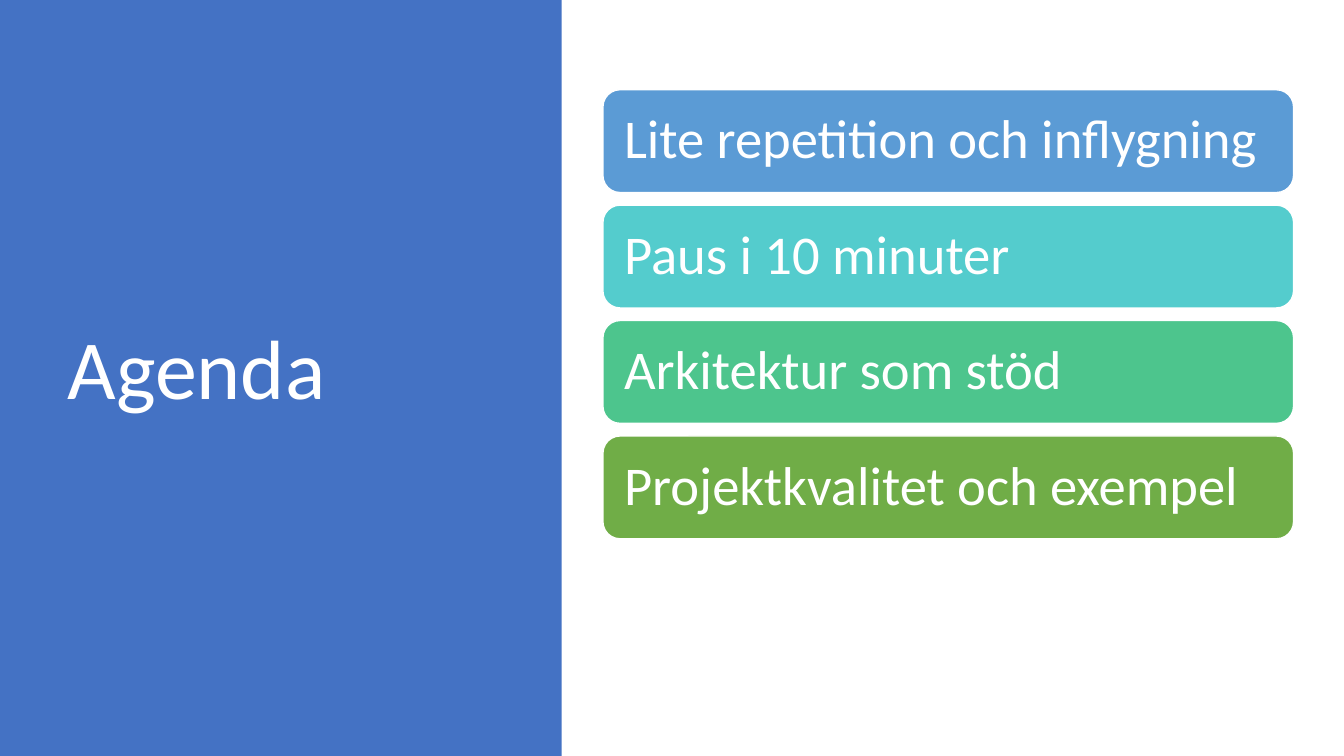
from dataclasses import dataclass

from pptx import Presentation
from pptx.dml.color import RGBColor
from pptx.enum.shapes import MSO_SHAPE
from pptx.enum.text import MSO_ANCHOR, MSO_AUTO_SIZE, PP_ALIGN
from pptx.util import Inches, Pt

RECTANGLE = MSO_SHAPE.RECTANGLE
ROUNDED_RECTANGLE = MSO_SHAPE.ROUNDED_RECTANGLE
MIDDLE = MSO_ANCHOR.MIDDLE
NO_AUTOFIT = MSO_AUTO_SIZE.NONE
LEFT = PP_ALIGN.LEFT
TITLE_ONLY_LAYOUT = 5


@dataclass(frozen=True)
class Theme:
    font: str = "Calibri"
    white: str = "FFFFFF"
    panel: str = "4472C4"
    item_fills: tuple = ("5B9BD5", "54CCCD", "4DC58D", "70AD47")
    title_size: int = 60
    item_size: int = 39
    outline_width: int = 1


THEME = Theme()

AGENDA_ITEMS = (
    "Lite repetition och inflygning",
    "Paus i 10 minuter",
    "Arkitektur som stöd",
    "Projektkvalitet och exempel",
)
ITEM_LEFT, ITEM_TOP = 5.98, 0.89
ITEM_WIDTH, ITEM_HEIGHT = 6.85, 1.02
ITEM_PITCH = 1.145


def apply_format(target, values):
    for name, value in values.items():
        setattr(target, name, value)


def write_text(shape, text, size, inset_x, inset_y):
    frame = shape.text_frame
    frame.text = text
    apply_format(frame, {
        "word_wrap": True,
        "auto_size": NO_AUTOFIT,
        "vertical_anchor": MIDDLE,
        "margin_left": Inches(inset_x),
        "margin_right": Inches(inset_x),
        "margin_top": Inches(inset_y),
        "margin_bottom": Inches(inset_y),
    })
    paragraph = frame.paragraphs[0]
    apply_format(paragraph, {"alignment": LEFT, "line_spacing": 0.9})
    font = paragraph.runs[0].font
    apply_format(font, {"name": THEME.font, "size": Pt(size)})
    font.color.rgb = RGBColor.from_string(THEME.white)


def add_filled_shape(slide, kind, left, top, width, height, fill):
    shape = slide.shapes.add_shape(
        kind, Inches(left), Inches(top), Inches(width), Inches(height))
    shape.shadow.inherit = False
    shape.fill.solid()
    shape.fill.fore_color.rgb = RGBColor.from_string(fill)
    shape.line.fill.background()
    return shape


def place_title(slide, text):
    title = slide.shapes.title
    apply_format(title, {
        "left": Inches(0.57),
        "top": Inches(0.68),
        "width": Inches(4.16),
        "height": Inches(6.02),
    })
    write_text(title, text, THEME.title_size, 0.1, 0.05)
    title.element.getparent().append(title.element)


def add_agenda_item(slide, index, text, fill):
    item = add_filled_shape(
        slide, ROUNDED_RECTANGLE, ITEM_LEFT, ITEM_TOP + index * ITEM_PITCH,
        ITEM_WIDTH, ITEM_HEIGHT, fill)
    item.line.color.rgb = RGBColor.from_string(THEME.white)
    item.line.width = Pt(THEME.outline_width)
    write_text(item, text, THEME.item_size, 0.16, 0.16)


def main():
    presentation = Presentation()
    presentation.slide_width = Inches(13.33)
    presentation.slide_height = Inches(7.5)
    slide = presentation.slides.add_slide(
        presentation.slide_layouts[TITLE_ONLY_LAYOUT])
    add_filled_shape(slide, RECTANGLE, 0, 0, 5.57, 7.5, THEME.panel)
    place_title(slide, "Agenda")
    for index, (text, fill) in enumerate(zip(AGENDA_ITEMS, THEME.item_fills)):
        add_agenda_item(slide, index, text, fill)
    presentation.save("out.pptx")


if __name__ == "__main__":
    main()
